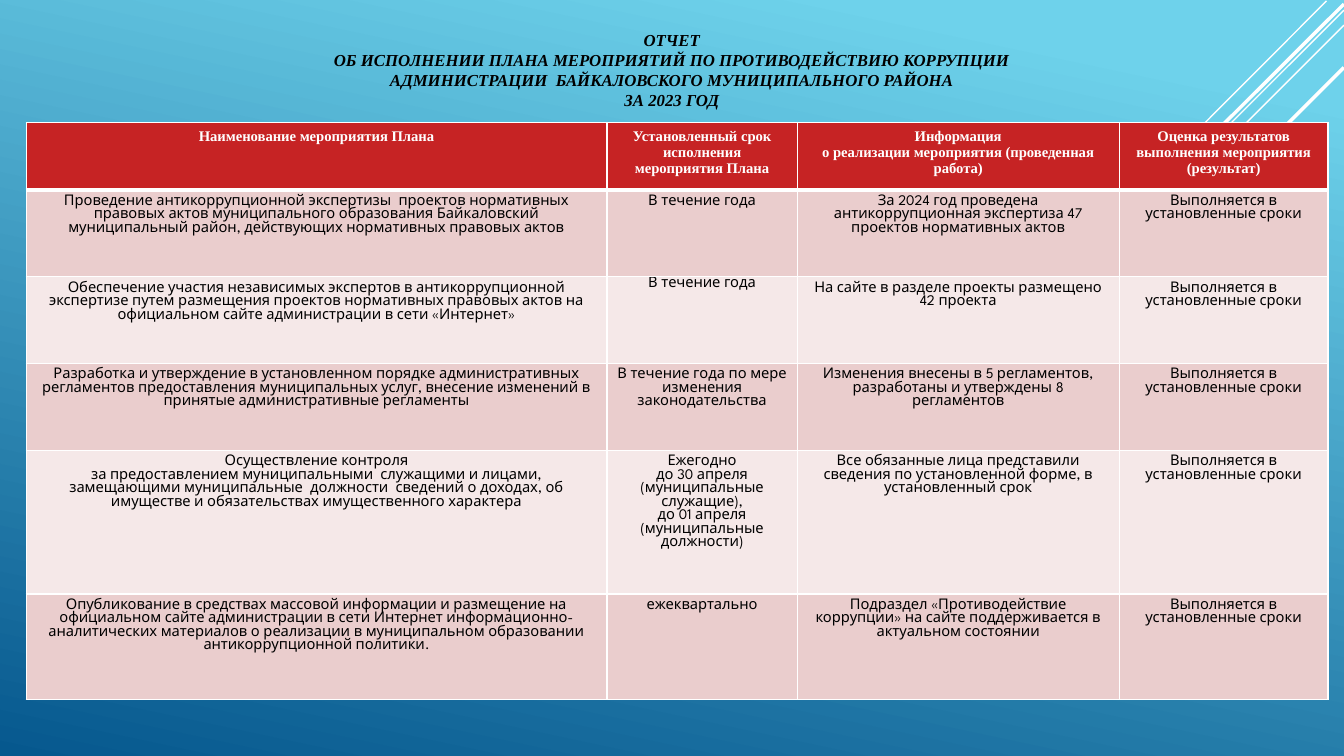
"""Build the slide reporting on the anti-corruption action plan."""
from lxml import etree
from pptx import Presentation
from pptx.dml.color import RGBColor
from pptx.enum.shapes import MSO_CONNECTOR
from pptx.enum.text import MSO_ANCHOR, MSO_AUTO_SIZE, PP_ALIGN
from pptx.oxml.ns import qn
from pptx.util import Pt

STRAIGHT = MSO_CONNECTOR.STRAIGHT
BOTTOM = MSO_ANCHOR.BOTTOM
NO_AUTOFIT = MSO_AUTO_SIZE.NONE
CENTER = PP_ALIGN.CENTER

COLORS = {
    "sky": "6ED2EB",
    "deep": "06588E",
    "white": "FFFFFF",
    "black": "000000",
    "header": "C62324",
    "odd": "EACDCD",
    "even": "F5E8E8",
}
IN_TIME = "Выполняется в установленные сроки"
ROWS = [
    ["Наименование мероприятия Плана",
     "Установленный срок исполнения мероприятия Плана",
     "Информация\vо реализации мероприятия (проведенная работа)",
     "Оценка результатов выполнения мероприятия (результат)"],
    ["Проведение антикоррупционной экспертизы  проектов нормативных правовых актов "
     "муниципального образования Байкаловский муниципальный район, действующих "
     "нормативных правовых актов",
     "В течение года",
     "За 2024 год проведена антикоррупционная экспертиза 47 проектов нормативных актов",
     IN_TIME],
    ["Обеспечение участия независимых экспертов в антикоррупционной экспертизе путем "
     "размещения проектов нормативных правовых актов на официальном сайте "
     "администрации в сети «Интернет»",
     "В течение года",
     "На сайте в разделе проекты размещено 42 проекта",
     IN_TIME],
    ["Разработка и утверждение в установленном порядке административных регламентов "
     "предоставления муниципальных услуг, внесение изменений в принятые "
     "административные регламенты",
     "В течение года по мере изменения законодательства",
     "Изменения внесены в 5 регламентов, разработаны и утверждены 8 регламентов",
     IN_TIME],
    ["Осуществление контроля\nза предоставлением муниципальными  служащими и лицами, "
     "замещающими муниципальные  должности  сведений о доходах, об имуществе и "
     "обязательствах имущественного характера",
     "Ежегодно\nдо 30 апреля (муниципальные служащие),\nдо 01 апреля\n"
     "(муниципальные должности)",
     "Все обязанные лица представили сведения по установленной форме, "
     "в установленный срок",
     IN_TIME],
    ["Опубликование в средствах массовой информации и размещение на официальном сайте "
     "администрации в сети Интернет информационно-аналитических материалов о реализации "
     "в муниципальном образовании антикоррупционной политики.",
     "ежеквартально",
     "Подраздел «Противодействие коррупции» на сайте поддерживается в актуальном состоянии",
     IN_TIME],
]
COLUMN_WIDTHS = [414.9, 135.9, 230, 149.2]
ROW_HEIGHTS = [48, 62, 62, 62, 102.5, 75.5]
STRIPES = [
    (947.5, 0.7, 648, 301, 1),
    (960, 7.2, 481, 486, 1),
    (960, 18, 569.5, 408.2, 1),
    (960, 2.9, 577.4, 384.5, 2.5),
    (960, 48.2, 617.8, 390.2, 2.5),
]


def style_text(frame, font_name, size, color, bold, italic=False):
    for paragraph in frame.paragraphs:
        paragraph.alignment = CENTER
        for span in paragraph.runs:
            span.font.name = font_name
            span.font.size = Pt(size)
            span.font.bold = bold
            span.font.italic = italic
            span.font.color.rgb = RGBColor.from_string(COLORS[color])


def add_borders(cell, bottom_width):
    properties = cell._tc.get_or_add_tcPr()
    widths = {"a:lnL": 1, "a:lnR": 1, "a:lnT": 1, "a:lnB": bottom_width}
    for position, (tag, width) in enumerate(widths.items()):
        line = etree.Element(qn(tag), w=str(Pt(width)))
        fill = etree.SubElement(line, qn("a:solidFill"))
        etree.SubElement(fill, qn("a:srgbClr"), val=COLORS["white"])
        properties.insert(position, line)


deck = Presentation()
deck.slide_width, deck.slide_height = Pt(960), Pt(540)
page = deck.slides.add_slide(deck.slide_layouts[5])

backdrop = page.background.fill
backdrop.gradient()
backdrop.gradient_angle = 258
for stop, color, position in zip(backdrop.gradient_stops, ("sky", "deep"), (0.1, 1)):
    stop.color.rgb = RGBColor.from_string(COLORS[color])
    stop.position = position

for left, top, right, bottom, width in STRIPES:
    stripe = page.shapes.add_connector(STRAIGHT, Pt(left), Pt(top), Pt(right), Pt(bottom))
    stripe.line.color.rgb = RGBColor.from_string(COLORS["white"])
    stripe.line.width = Pt(width)
    etree.SubElement(stripe._element.spPr, qn("a:effectLst"))

title = page.shapes.title
title.left, title.top, title.width, title.height = Pt(211.7), Pt(9.4), Pt(536.4), Pt(72.7)
title.text_frame.text = (
    "ОТЧЕТ\vОБ ИСПОЛНЕНИИ ПЛАНА МЕРОПРИЯТИЙ ПО ПРОТИВОДЕЙСТВИЮ КОРРУПЦИИ\v"
    "АДМИНИСТРАЦИИ  БАЙКАЛОВСКОГО МУНИЦИПАЛЬНОГО РАЙОНА\vЗА 2023 ГОД"
)
title.text_frame.word_wrap = True
title.text_frame.auto_size = NO_AUTOFIT
title.text_frame.vertical_anchor = BOTTOM
style_text(title.text_frame, "Times New Roman", 12, "black", True, True)

table = page.shapes.add_table(
    len(ROWS), len(COLUMN_WIDTHS), Pt(18.7), Pt(87.8),
    Pt(sum(COLUMN_WIDTHS)), Pt(sum(ROW_HEIGHTS)),
).table
for column, width in zip(table.columns, COLUMN_WIDTHS):
    column.width = Pt(width)
for row_number, (row, height, texts) in enumerate(zip(table.rows, ROW_HEIGHTS, ROWS)):
    row.height = Pt(height)
    is_header = row_number == 0
    fill_color = "header" if is_header else ("even", "odd")[row_number % 2]
    for cell, text in zip(row.cells, texts):
        cell.text_frame.text = text
        if is_header:
            style_text(cell.text_frame, "Times New Roman", 10.5, "white", True)
        else:
            style_text(cell.text_frame, "League Spartan", 10.5, "black", False)
        cell.fill.solid()
        cell.fill.fore_color.rgb = RGBColor.from_string(COLORS[fill_color])
        add_borders(cell, 3 if is_header else 1)

expert_term = table.cell(2, 1)
expert_term.margin_left = expert_term.margin_right = Pt(5)
expert_term.margin_top = expert_term.margin_bottom = Pt(0)

deck.save("out.pptx")
